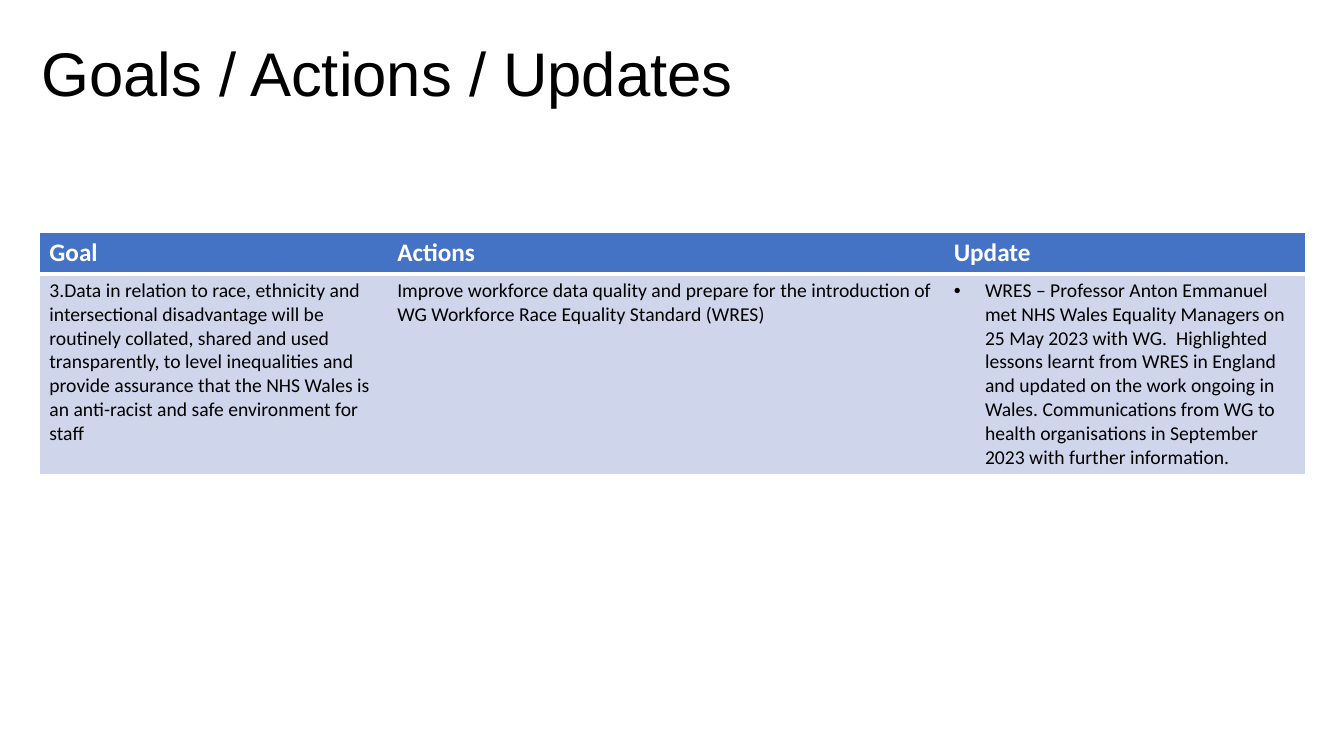
import lxml.etree
import pptx
import pptx.dml.color
import pptx.enum.text
import pptx.oxml.ns
import pptx.util

Inches = pptx.util.Inches
Pt = pptx.util.Pt
qn = pptx.oxml.ns.qn

WHITE, BLACK = "FFFFFF", "000000"
HEADER_BLUE, BODY_BLUE = "4472C4", "CFD5EA"
COLUMN_WIDTHS = [3.45, 5.52, 3.59]
ROW_HEIGHTS = [0.4, 1.97]
HEADINGS = ["Goal", "Actions", "Update"]
DETAILS = [
    "3.Data in relation to race, ethnicity and intersectional disadvantage will be "
    "routinely collated, shared and used transparently, to level inequalities and "
    "provide assurance that the NHS Wales is an anti-racist and safe environment for staff",
    "Improve workforce data quality and prepare for the introduction of "
    "WG Workforce Race Equality Standard (WRES)",
    "WRES – Professor Anton Emmanuel met NHS Wales Equality Managers on 25 May 2023 "
    "with WG.  Highlighted lessons learnt from WRES in England and updated on the work "
    "ongoing in Wales. Communications from WG to health organisations in September 2023 "
    "with further information.",
]


def color(hex_value):
    return pptx.dml.color.RGBColor.from_string(hex_value)


def style_font(paragraph, name, size, hex_value, bold=False):
    font = paragraph.font
    font.name, font.size, font.bold = name, Pt(size), bold
    font.color.rgb = color(hex_value)


def add_bullet(paragraph, indent):
    properties = paragraph._p.get_or_add_pPr()
    properties.set("marL", str(indent))
    properties.set("indent", str(-indent))
    bullet_font = lxml.etree.SubElement(properties, qn("a:buFont"))
    bullet_font.set("typeface", "Arial")
    lxml.etree.SubElement(properties, qn("a:buChar")).set("char", "•")


def set_borders(cell, widths):
    """Draw white left, right, top and bottom borders; a width of 0 hides one."""
    properties = cell._tc.get_or_add_tcPr()
    for side, width in zip("LRTB", widths):
        line = lxml.etree.SubElement(properties, qn(f"a:ln{side}"))
        if width:
            line.set("w", str(Pt(width)))
            fill = lxml.etree.SubElement(line, qn("a:solidFill"))
            lxml.etree.SubElement(fill, qn("a:srgbClr")).set("val", WHITE)
        else:
            lxml.etree.SubElement(line, qn("a:noFill"))


def place_title(slide, left, top, width, height):
    title = slide.shapes.title
    title.left, title.top = Inches(left), Inches(top)
    title.width, title.height = Inches(width), Inches(height)
    frame = title.text_frame
    frame.text = "Goals / Actions / Updates"
    frame.word_wrap = True
    frame.vertical_anchor = pptx.enum.text.MSO_ANCHOR.MIDDLE
    heading = frame.paragraphs[0]
    heading.alignment = pptx.enum.text.PP_ALIGN.LEFT
    heading.line_spacing = 0.9
    style_font(heading, "Arial", 44, BLACK)


def add_goals_table(slide, left, top):
    goals = slide.shapes.add_table(
        len(ROW_HEIGHTS), len(COLUMN_WIDTHS), Inches(left), Inches(top),
        Inches(sum(COLUMN_WIDTHS)), Inches(sum(ROW_HEIGHTS))).table
    for column, width in zip(goals.columns, COLUMN_WIDTHS):
        column.width = Inches(width)
    for row, height in zip(goals.rows, ROW_HEIGHTS):
        row.height = Inches(height)

    row_styles = [
        (HEADINGS, HEADER_BLUE, WHITE, 18, True, (1, 3)),
        (DETAILS, BODY_BLUE, BLACK, 14, False, (3, 1)),
    ]
    last = len(COLUMN_WIDTHS) - 1
    for r, (texts, fill, ink, size, bold, rules) in enumerate(row_styles):
        for c, text in enumerate(texts):
            cell = goals.cell(r, c)
            cell.text = text
            set_borders(cell, (int(c == 0), int(c == last), *rules))
            cell.fill.solid()
            cell.fill.fore_color.rgb = color(fill)
            paragraph = cell.text_frame.paragraphs[0]
            if texts is DETAILS and c == last:
                add_bullet(paragraph, Inches(0.31))
            style_font(paragraph, "Calibri", size, ink, bold)


def main():
    presentation = pptx.Presentation()
    presentation.slide_width = Inches(13.33)
    presentation.slide_height = Inches(7.5)
    slide = presentation.slides.add_slide(presentation.slide_layouts[5])
    place_title(slide, 0.31, 0.03, 11.5, 1.45)
    add_goals_table(slide, 0.39, 2.31)
    presentation.save("out.pptx")


if __name__ == "__main__":
    main()
